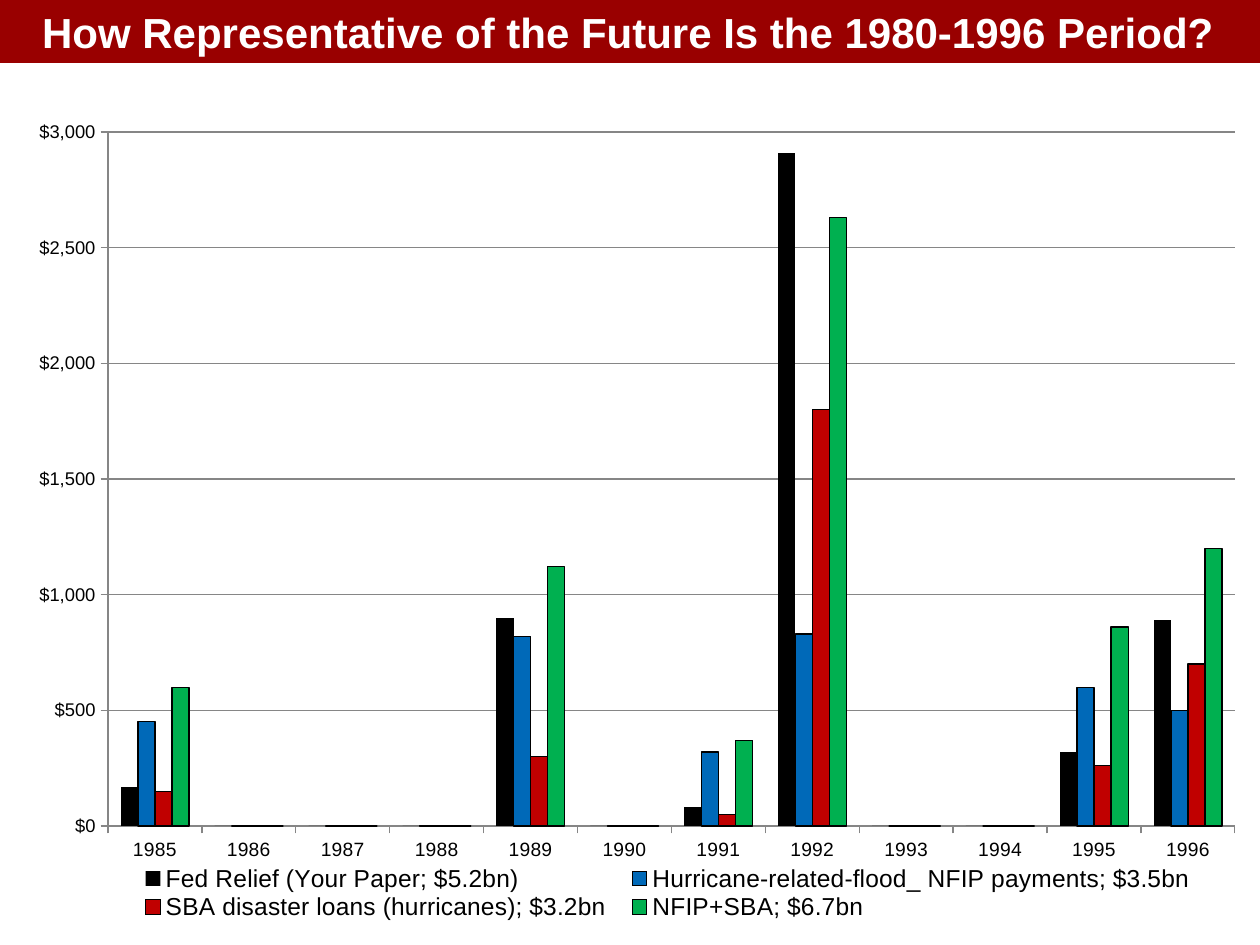
from lxml import etree
from pptx import Presentation
from pptx import util as u
from pptx.chart.data import CategoryChartData
from pptx.dml.color import RGBColor
from pptx.enum import chart as charts, text
from pptx.oxml.ns import qn

PX = u.Inches(1) / 126
FONT = "Arial"
COLORS = {"banner": "990000", "white": "FFFFFF", "black": "000000", "blue": "0069B8",
          "red": "C00000", "green": "00B050", "grid": "868686"}
TITLE_BOX = (-4, 0, 1264, 63)
CHART_BOX = (15, 105, 1245, 819)
PLOT_BOX = (93, 27, 1127, 694)      # within the chart box
LEGEND_BOX = (113, 759, 1080, 58)   # within the chart box

YEARS = range(1985, 1997)
SERIES = [  # name, colour, outlined, payments in the years that had any
    ("Fed Relief (Your Paper; $5.2bn)", "black", False,
     {1985: 170, 1989: 900, 1991: 80, 1992: 2910, 1995: 320, 1996: 890}),
    ("Hurricane-related-flood_ NFIP payments; $3.5bn", "blue", True,
     {1985: 450, 1989: 820, 1991: 320, 1992: 830, 1995: 600, 1996: 500}),
    ("SBA disaster loans (hurricanes); $3.2bn", "red", True,
     {1985: 150, 1989: 300, 1991: 50, 1992: 1800, 1995: 260, 1996: 700}),
    ("NFIP+SBA; $6.7bn", "green", True,
     {1985: 600, 1989: 1120, 1991: 370, 1992: 2630, 1995: 860, 1996: 1200}),
]


def emu(box):
    return [round(length * PX) for length in box]


def color(name):
    return RGBColor.from_string(COLORS[name])


def set_all(target, values):
    for name, value in values.items():
        setattr(target, name, value)


def set_font(font, size, tone="black", bold=False):
    set_all(font, {"name": FONT, "size": u.Pt(size), "bold": bold})
    font.color.rgb = color(tone)


def set_line(line, tone, width=0.75):
    line.color.rgb = color(tone)
    line.width = u.Pt(width)


def set_layout(element, index, box, frame, inner=False):
    """Fix a chart part at box, in px within the chart's frame."""
    for old in element.findall(qn("c:layout")):
        element.remove(old)
    layout = etree.Element(qn("c:layout"))
    manual = etree.SubElement(layout, qn("c:manualLayout"))
    values = {"layoutTarget": "inner"} if inner else {}
    values.update(xMode="edge", yMode="edge")
    for name, part, whole in zip("xywh", box, frame[2:] * 2):
        values[name] = f"{part / whole:.4f}"
    for tag, value in values.items():
        etree.SubElement(manual, qn(f"c:{tag}")).set("val", value)
    element.insert(index, layout)


def add_banner(page, box):
    title = page.shapes.title
    set_all(title, dict(zip(("left", "top", "width", "height"), emu(box))))
    title.fill.solid()
    title.fill.fore_color.rgb = color("banner")
    frame = title.text_frame
    set_all(frame, {"word_wrap": True, "auto_size": text.MSO_AUTO_SIZE.NONE,
                    "vertical_anchor": text.MSO_ANCHOR.MIDDLE})
    para = frame.paragraphs[0]
    para.alignment = text.PP_ALIGN.CENTER
    span = para.add_run()
    span.text = "How Representative of the Future Is the 1980-1996 Period?"
    set_font(span.font, 24, "white", bold=True)


def format_axes(chart):
    for axis, size in ((chart.category_axis, 11), (chart.value_axis, 10.5)):
        axis.major_tick_mark = charts.XL_TICK_MARK.OUTSIDE
        set_font(axis.tick_labels.font, size)
        set_line(axis.format.line, "grid")
    amounts = chart.value_axis
    set_all(amounts, {"minimum_scale": 0, "maximum_scale": 3000, "major_unit": 500,
                      "has_major_gridlines": True})
    set_line(amounts.major_gridlines.format.line, "grid")
    set_all(amounts.tick_labels, {"number_format": '"$"#,##0',
                                  "number_format_is_linked": False})


def add_relief_chart(page, box):
    data = CategoryChartData()
    data.categories = [str(year) for year in YEARS]
    for name, _, _, payments in SERIES:
        data.add_series(name, [payments.get(year, 0) for year in YEARS])
    chart = page.shapes.add_chart(
        charts.XL_CHART_TYPE.COLUMN_CLUSTERED, *emu(box), data).chart
    set_all(chart, {"has_title": False, "has_legend": True})
    set_font(chart.font, 10)
    format_axes(chart)

    plot = chart.plots[0]
    set_all(plot, {"gap_width": 150, "overlap": 0, "vary_by_categories": False})
    for series, (_, tone, outlined, _) in zip(plot.series, SERIES):
        series.format.fill.solid()
        series.format.fill.fore_color.rgb = color(tone)
        if outlined:
            set_line(series.format.line, "black")

    legend = chart.legend
    set_all(legend, {"position": charts.XL_LEGEND_POSITION.BOTTOM,
                     "include_in_layout": False})
    set_font(legend.font, 14)
    plot_area = chart.element.find(".//" + qn("c:plotArea"))
    legend_part = chart.element.find(".//" + qn("c:legend"))
    set_layout(plot_area, 0, PLOT_BOX, box, inner=True)
    set_layout(legend_part, 1, LEGEND_BOX, box)


def main():
    deck = Presentation()
    set_all(deck, {"slide_width": u.Inches(10), "slide_height": u.Inches(7.5)})
    page = deck.slides.add_slide(deck.slide_layouts.get_by_name("Title Only"))
    add_relief_chart(page, CHART_BOX)
    add_banner(page, TITLE_BOX)
    deck.save("out.pptx")


if __name__ == "__main__":
    main()
